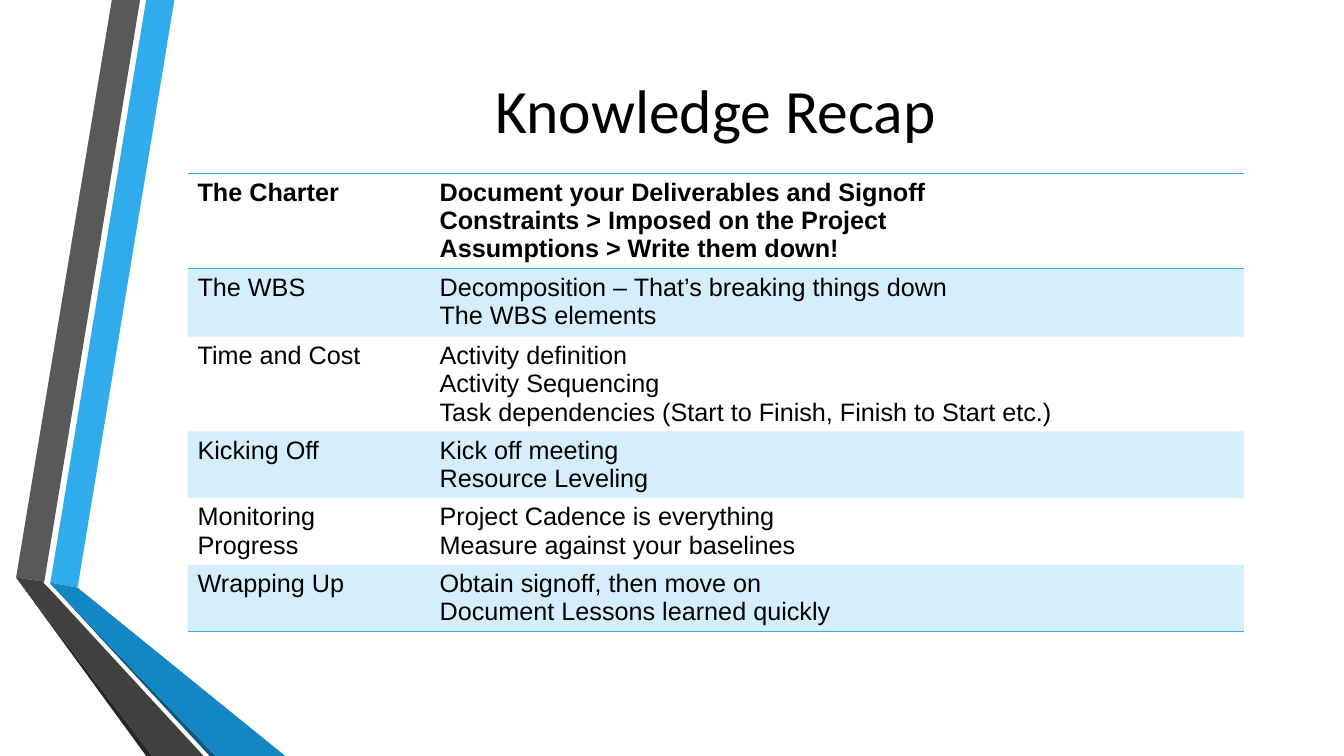
from lxml import etree
from pptx import Presentation
from pptx import util as u
from pptx.dml.color import RGBColor
from pptx.enum import text
from pptx.oxml import ns

PX = 9144  # 100 px to the inch
BLUE, BLACK = "30ACEC", "000000"


def color(code):
    return RGBColor.from_string(code)


def node(parent, tag, **attrs):
    return etree.SubElement(parent, ns.qn(tag), attrs)


class Deck:
    def __init__(self, wide, high):
        self.prs = Presentation()
        self.prs.slide_width, self.prs.slide_height = wide * PX, high * PX
        self.slide = self.prs.slides.add_slide(self.prs.slide_layouts[5])

    def style(self, frame, size, face, bold=False, **form):
        for para in frame.paragraphs:
            for key, val in form.items():
                setattr(para, key, val)
            look = {"size": u.Pt(size), "name": face, "bold": bold}
            for run in para.runs:
                for key, val in look.items():
                    setattr(run.font, key, val)
                run.font.color.rgb = color(BLACK)

    def title(self, words, box):
        shape = self.slide.shapes.title
        for key, val in zip(("left", "top", "width", "height"), box):
            setattr(shape, key, val * PX)
        frame = shape.text_frame
        frame.text = words
        frame.auto_size = text.MSO_AUTO_SIZE.NONE
        frame.vertical_anchor = text.MSO_ANCHOR.TOP
        self.style(frame, 44, "Calibri", alignment=text.PP_ALIGN.CENTER,
                   line_spacing=0.9)

    def ribbon(self, fill, points):
        pen = self.slide.shapes.build_freeform(*points[0], scale=PX)
        pen.add_line_segments(points[1:], close=True)
        shape = pen.convert_to_shape()
        shape.shadow.inherit = False
        shape.fill.solid()
        shape.fill.fore_color.rgb = color(fill)
        shape.line.fill.background()

    def border(self, cell, ruled):
        props = cell._tc.get_or_add_tcPr()
        for side in "LRTB":
            line = node(props, f"a:ln{side}", w=str(u.Pt(1)))
            if side in ruled:
                node(node(line, "a:solidFill"), "a:srgbClr", val=BLUE)
            else:
                node(line, "a:noFill")

    def tint(self, cell, on):
        if not on:
            cell.fill.background()
            return
        cell.fill.solid()
        cell.fill.fore_color.rgb = color(BLUE)
        hue = cell._tc.tcPr.find(".//" + ns.qn("a:solidFill") + "/" + ns.qn("a:srgbClr"))
        fill = cell._tc.tcPr.find(ns.qn("a:solidFill"))
        hue = fill[0] if hue is None else fill[0]
        node(hue, "a:alpha", val="20000")

    def table(self, rows, left, top, cols, highs):
        grid = self.slide.shapes.add_table(
            len(rows), len(cols), left * PX, top * PX,
            sum(cols) * PX, sum(highs) * PX).table
        grid.first_row = grid.horz_banding = False
        for col, wide in zip(grid.columns, cols):
            col.width = wide * PX
        for i, (row, high) in enumerate(zip(rows, highs)):
            grid.rows[i].height = high * PX
            # Rules frame the header and close the last row
            ruled = {0: "TB", 1: "T", len(rows) - 1: "B"}.get(i, "")
            for j, words in enumerate(row):
                cell = grid.cell(i, j)
                cell.text_frame.text = words
                self.style(cell.text_frame, 18, "Arial", bold=i == 0)
                self.border(cell, ruled)
                self.tint(cell, i % 2)


RIBBONS = [
    (BLUE, [(50, 578), (77, 583), (173, 0), (145, 0)]),
    ("595959", [(139, 0), (111, 0), (16, 573), (44, 577)]),
    ("262626", [(16, 573), (145, 750), (151, 750)]),
    ("0C5A82", [(50, 579), (208, 750), (214, 750)]),
    ("1287C3", [(50, 579), (214, 750), (283, 750), (77, 583), (50, 578)]),
    ("404040", [(202, 750), (48, 583), (43, 578), (44, 577), (16, 573), (151, 750)]),
]

TOPICS = [
    ("The Charter", "Document your Deliverables and Signoff\n"
     "Constraints > Imposed on the Project\nAssumptions > Write them down!"),
    ("The WBS", "Decomposition – That’s breaking things down\nThe WBS elements"),
    ("Time and Cost", "Activity definition\nActivity Sequencing\n"
     "Task dependencies (Start to Finish, Finish to Start etc.)"),
    ("Kicking Off", "Kick off meeting\nResource Leveling"),
    ("Monitoring Progress", "Project Cadence is everything\nMeasure against your baselines"),
    ("Wrapping Up", "Obtain signoff, then move on\nDocument Lessons learned quickly"),
]


def main():
    deck = Deck(1333, 750)
    # Folded ribbons at the left
    for fill, points in RIBBONS:
        deck.ribbon(fill, points)
    # Title and recap table
    deck.title("Knowledge Recap", (162, 75, 1096, 192))
    deck.table(TOPICS, 186, 172, (240, 808), (94, 68, 94, 66, 66, 66))
    deck.prs.save("out.pptx")


if __name__ == "__main__":
    main()
